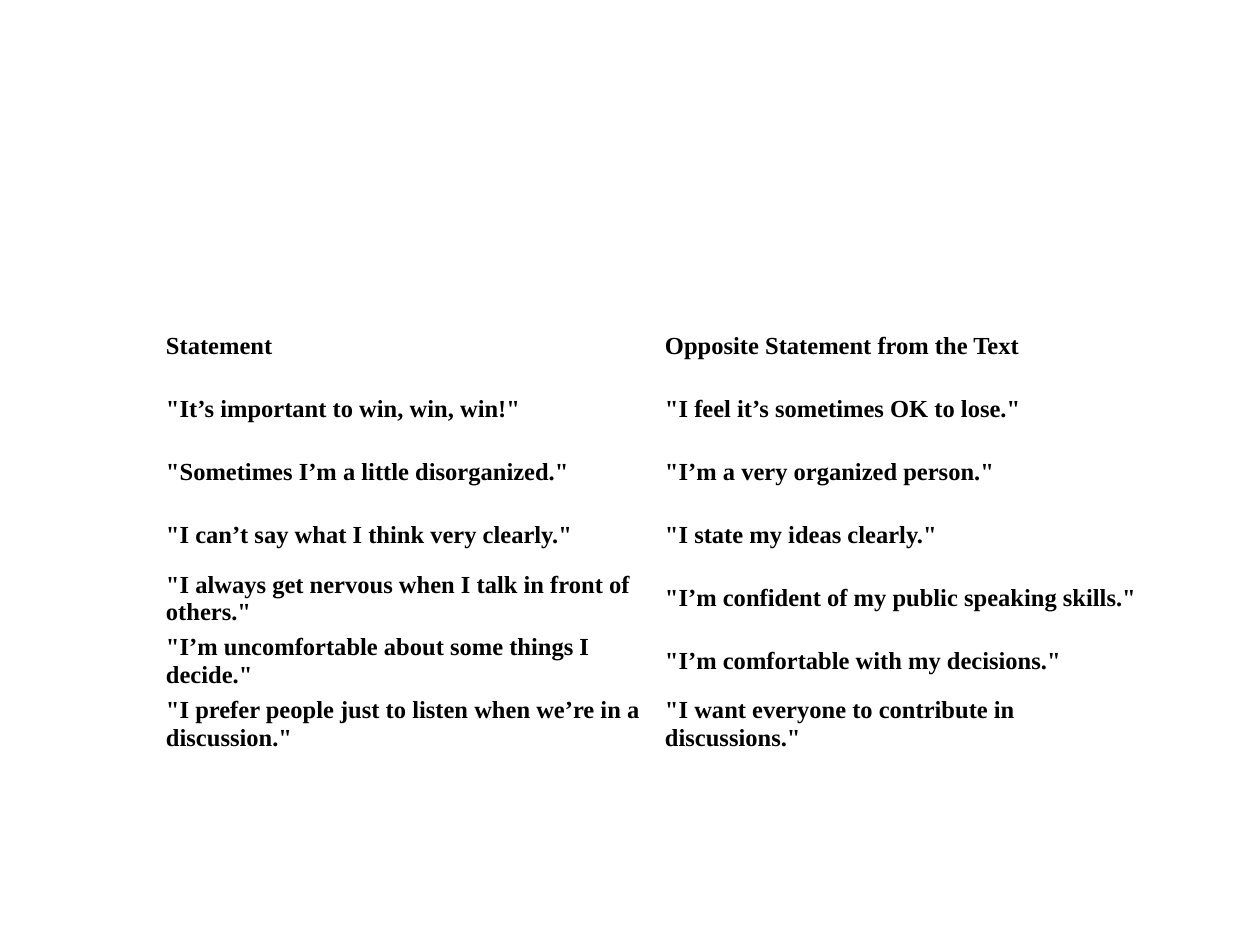
from pptx import Presentation
from pptx.dml.color import RGBColor
from pptx.enum import text
from pptx.util import Emu, Pt

PX = 914400 // 126  # EMU in one px

THEME = {
    "font": {"name": "Times New Roman", "size": Pt(14), "bold": True},
    "ink": RGBColor(0, 0, 0),
}

ROWS = [
    ("Statement", "Opposite Statement from the Text"),
    ('"It’s important to win, win, win!"', '"I feel it’s sometimes OK to lose."'),
    ('"Sometimes I’m a little disorganized."', '"I’m a very organized person."'),
    ('"I can’t say what I think very clearly."', '"I state my ideas clearly."'),
    ('"I always get nervous when I talk in front of others."',
     '"I’m confident of my public speaking skills."'),
    ('"I’m uncomfortable about some things I decide."',
     '"I’m comfortable with my decisions."'),
    ('"I prefer people just to listen when we’re in a discussion."',
     '"I want everyone to contribute in discussions."'),
]


def px(n):
    return Emu(n * PX)


def put(item, values):
    for key, value in values.items():
        setattr(item, key, value)


def fill_cell(cell, words):
    put(cell, {
        "text": words,
        "vertical_anchor": text.MSO_ANCHOR.MIDDLE,
        "margin_left": px(9), "margin_right": px(9),
        "margin_top": px(4), "margin_bottom": px(4),
    })
    cell.fill.background()
    font = cell.text_frame.paragraphs[0].runs[0].font
    put(font, THEME["font"])
    font.color.rgb = THEME["ink"]


def draw_pairs(slide, left, top, width, height):
    """Table of statements beside their opposites, in equal rows."""
    grid = slide.shapes.add_table(
        len(ROWS), len(ROWS[0]), px(left), px(top), px(width), px(height)).table
    put(grid, {"first_row": False, "horz_banding": False})
    for r, row in enumerate(ROWS):
        grid.rows[r].height = px(height // len(ROWS))
        for c, words in enumerate(row):
            fill_cell(grid.cell(r, c), words)


def main():
    deck = Presentation()
    put(deck, {"slide_width": px(1260), "slide_height": px(945)})
    slide = deck.slides.add_slide(deck.slide_layouts[6])
    # Statement table
    draw_pairs(slide, 157, 315, 998, 441)
    deck.save("out.pptx")


if __name__ == "__main__":
    main()
